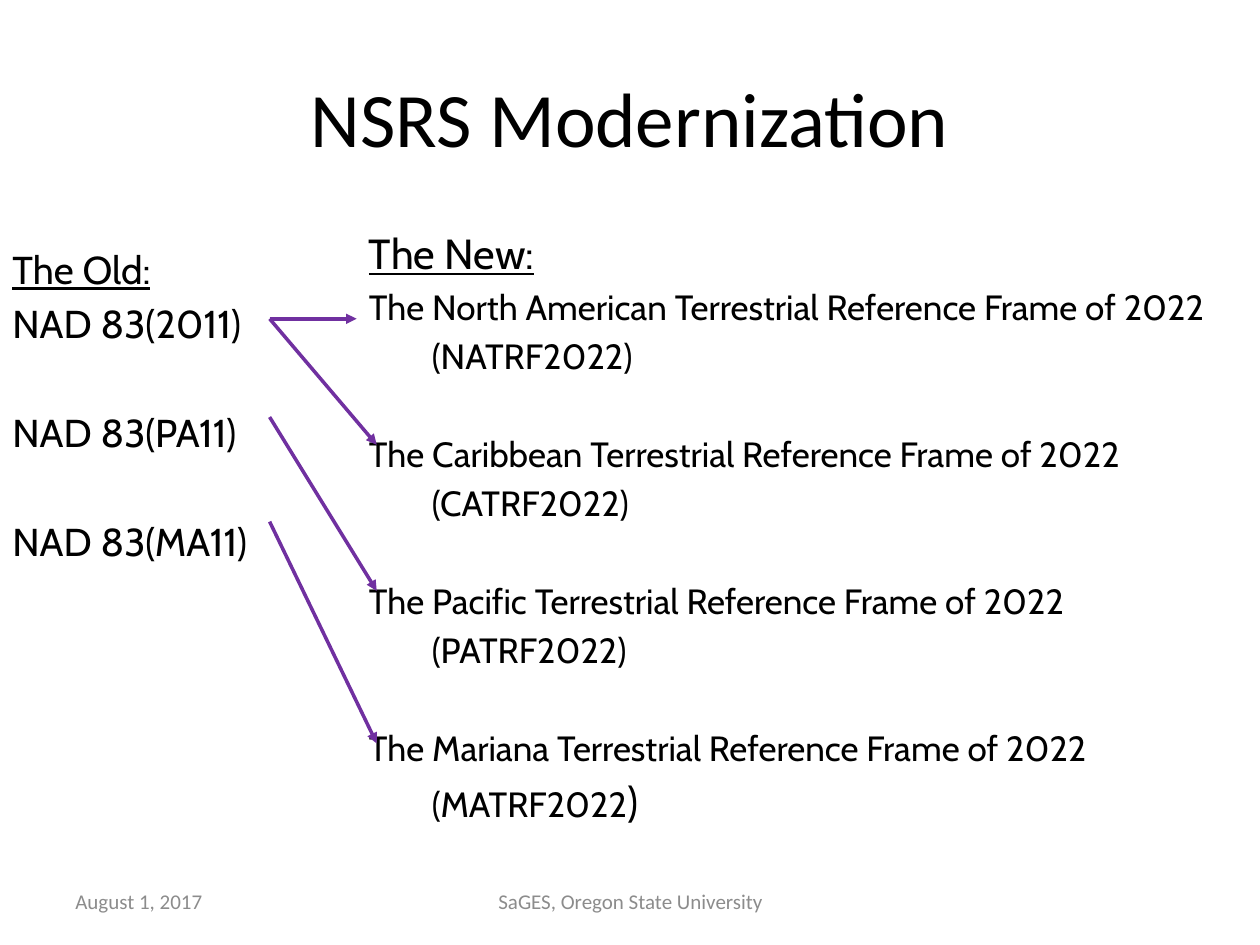
import pptx
import pptx.dml.color
import pptx.enum.shapes
import pptx.enum.text
import pptx.oxml
import pptx.oxml.ns
import pptx.util

PX = 9144
BLACK = pptx.dml.color.RGBColor(0x00, 0x00, 0x00)
GRAY = pptx.dml.color.RGBColor(0x8C, 0x8C, 0x8C)
PURPLE = pptx.dml.color.RGBColor(0x70, 0x30, 0xA0)
LEFT = pptx.enum.text.PP_ALIGN.LEFT
CENTER = pptx.enum.text.PP_ALIGN.CENTER
MIDDLE = pptx.enum.text.MSO_ANCHOR.MIDDLE

OLD_FRAMES = ["NAD 83(2011)", "NAD 83(PA11)", "NAD 83(MA11)"]
NEW_FRAMES = [
    ("North American", "NATRF2022"),
    ("Caribbean", "CATRF2022"),
    ("Pacific", "PATRF2022"),
    ("Mariana", "MATRF2022"),
]
ARROWS = [
    (214, 253, 283, 253),
    (214, 253, 299, 353),
    (214, 331, 299, 469),
    (214, 414, 299, 590),
]


def add_frame(page, left, top, width, height):
    """Add an empty wrapping text box and return its text frame."""
    box = page.shapes.add_textbox(left * PX, top * PX, width * PX, height * PX)
    box.text_frame.word_wrap = True
    return box.text_frame


def style_font(font, name, size, color):
    """Set the typeface, size and colour of a font."""
    font.name = name
    font.size = pptx.util.Pt(size)
    font.color.rgb = color


def add_label(page, bounds, text, size, color, align):
    """Add one vertically centred Calibri line."""
    frame = add_frame(page, *bounds)
    frame.vertical_anchor = MIDDLE
    frame.text = text
    para = frame.paragraphs[0]
    para.alignment = align
    style_font(para.runs[0].font, "Calibri", size, color)


def add_column(page, bounds, heading, heading_size, lines, size):
    """Add an underlined heading over (text, space before) lines."""
    frame = add_frame(page, *bounds)
    frame.text = heading
    heading_font = frame.paragraphs[0].runs[0].font
    style_font(heading_font, "Cabin", heading_size, BLACK)
    heading_font.underline = True
    for text, space in lines:
        para = frame.add_paragraph()
        para.text = text
        para.space_before = pptx.util.Pt(space)
        style_font(para.runs[0].font, "Cabin", size, BLACK)
    return frame


def add_old_column(page, bounds):
    """List the frames being replaced."""
    lines = [(name, 35.5 if index else 4.4) for index, name in enumerate(OLD_FRAMES)]
    add_column(page, bounds, "The Old:", 22.2, lines, 22.2)


def add_new_column(page, bounds):
    """List the replacement frames with their abbreviations."""
    lines = []
    for index, (region, code) in enumerate(NEW_FRAMES):
        name = f"The {region} Terrestrial Reference Frame of 2022"
        closing = "" if index == len(NEW_FRAMES) - 1 else ")"
        lines += [(name, 32 if index else 4), (f"\t({code}{closing}", 4)]
    frame = add_column(page, bounds, "The New:", 24, lines, 20)
    span = frame.paragraphs[-1].add_run()
    span.text = ")"
    style_font(span.font, "Cabin", 24, BLACK)


def add_arrow(page, start_x, start_y, end_x, end_y):
    """Draw a purple arrow from an old frame to a new one."""
    arrow = page.shapes.add_connector(
        pptx.enum.shapes.MSO_CONNECTOR.STRAIGHT,
        start_x * PX, start_y * PX, end_x * PX, end_y * PX)
    arrow.line.color.rgb = PURPLE
    arrow.line.width = pptx.util.Pt(2)
    namespace = pptx.oxml.ns.nsdecls("a")
    arrow.line._get_or_add_ln().append(
        pptx.oxml.parse_xml(f'<a:tailEnd {namespace} type="triangle"/>'))
    arrow._element.spPr.append(pptx.oxml.parse_xml(f"<a:effectLst {namespace}/>"))


def main():
    """Build and save the deck."""
    deck = pptx.Presentation()
    deck.slide_width = 1000 * PX
    deck.slide_height = 750 * PX
    page = deck.slides.add_slide(deck.slide_layouts[6])
    add_label(page, (50, 30, 900, 125), "NSRS Modernization", 44, BLACK, CENTER)
    add_old_column(page, (0, 190, 299, 258))
    add_new_column(page, (283, 176, 692, 525))
    add_label(page, (50, 695, 233, 40), "August 1, 2017", 12, GRAY, LEFT)
    add_label(page, (342, 695, 317, 40), "SaGES, Oregon State University", 12, GRAY, CENTER)
    for ends in ARROWS:
        add_arrow(page, *ends)
    deck.save("out.pptx")


if __name__ == "__main__":
    main()
